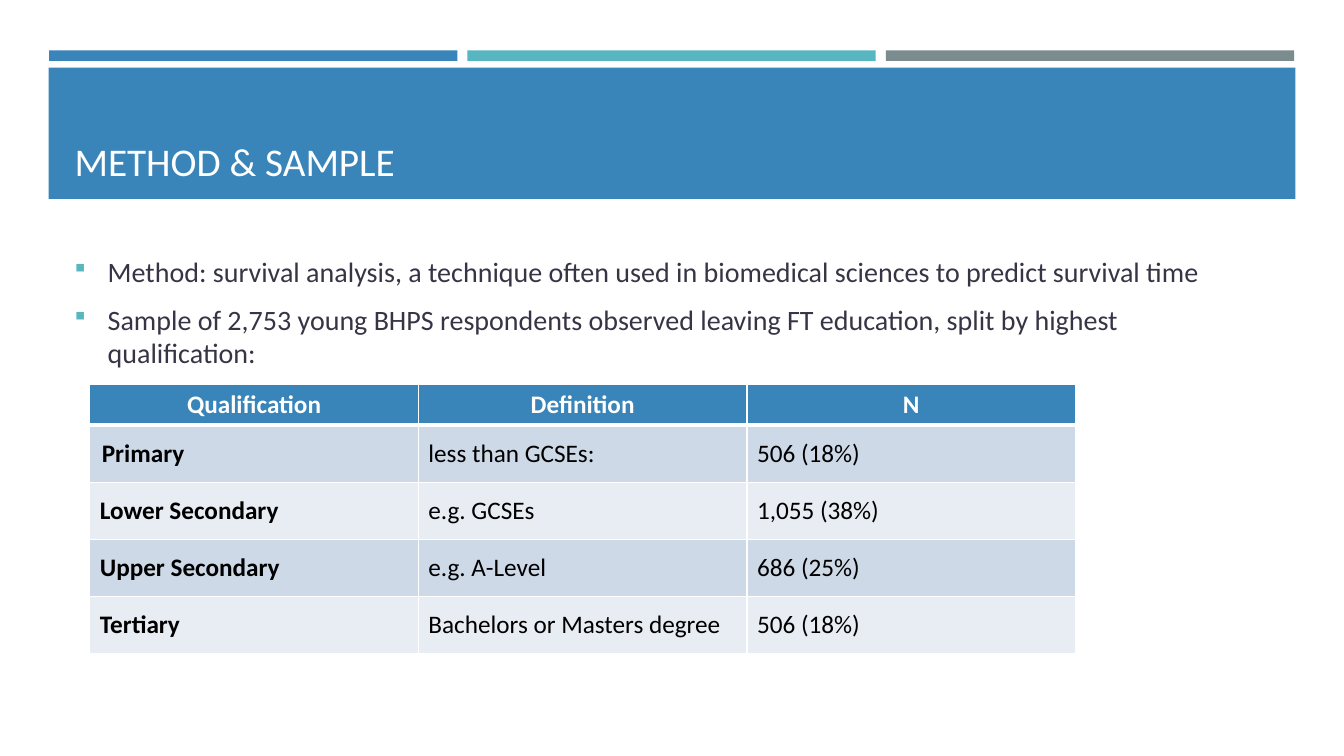
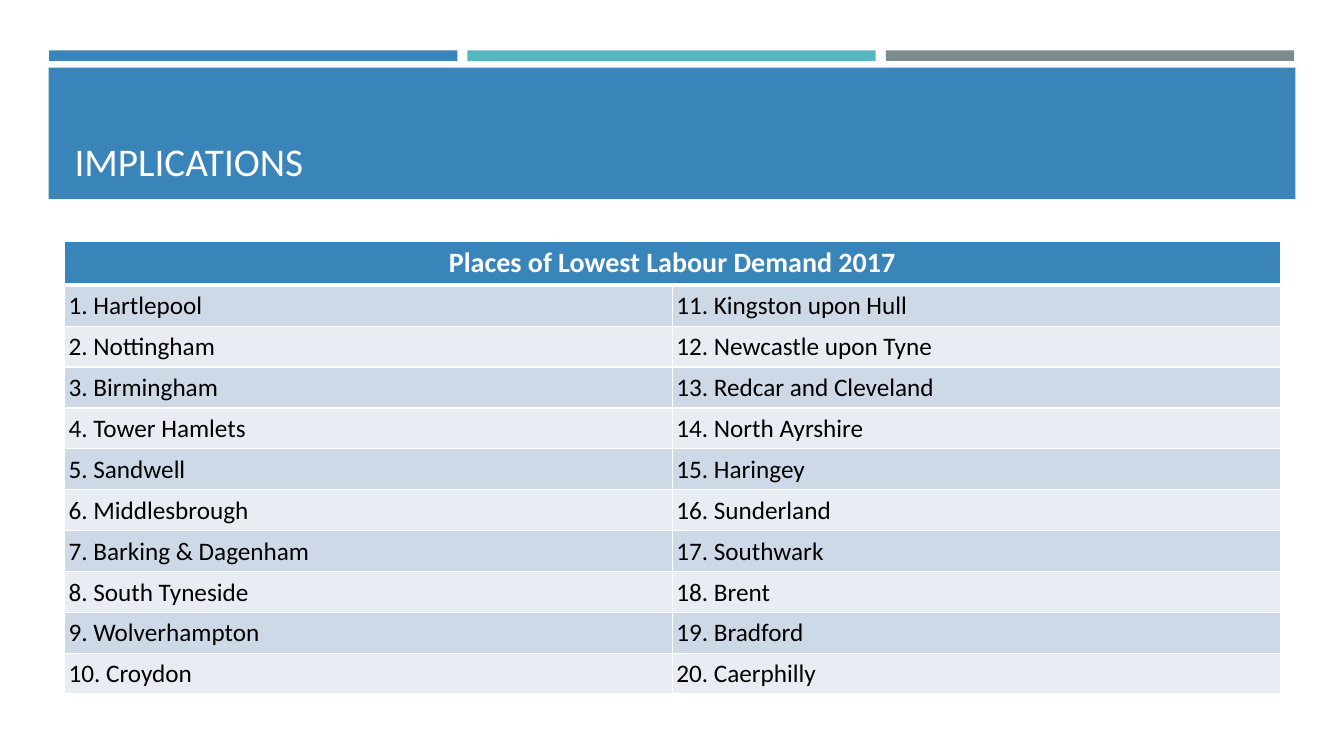
from lxml import etree
from pptx import Presentation
from pptx import util as u
from pptx.dml.color import RGBColor
from pptx.enum import shapes, text
from pptx.oxml.ns import qn

BLUE, TEAL, GREY = "3985BA", "58B6C0", "7A8C8E"
WHITE, BLACK, INK = "FFFFFF", "000000", "373545"
STRIPES = ["CED9E7", "E8EDF3"]
CONTENT_LEFT, CONTENT_WIDTH = 4.8, 90.45


def colour(value):
    return RGBColor.from_string(value)


class Deck:
    font = "Calibri"

    def __init__(self):
        self.presentation = Presentation()
        self.presentation.slide_width = u.Inches(13.33)
        self.presentation.slide_height = u.Inches(7.5)
        self.slide = None

    def across(self, percent):
        return round(self.presentation.slide_width * percent / 100)

    def down(self, percent):
        return round(self.presentation.slide_height * percent / 100)

    def box(self, left, top, width, height):
        return self.across(left), self.down(top), self.across(width), self.down(height)

    def style(self, paragraph, size, value, bold=False, align=text.PP_ALIGN.LEFT):
        paragraph.alignment = align
        for run in paragraph.runs:
            run.font.name = self.font
            run.font.size = u.Pt(size)
            run.font.bold = bold
            run.font.color.rgb = colour(value)

    def add_slide(self, heading):
        layout = self.presentation.slide_layouts.get_by_name("Title Only")
        self.slide = self.presentation.slides.add_slide(layout)
        for column, fill in enumerate([BLUE, TEAL, GREY]):
            self.band(3.65 + column * 31.13, 6.65, 30.38, 1.4, fill)
        self.band(3.62, 8.95, 92.77, 17.37, BLUE)
        self.title(heading)

    def band(self, left, top, width, height, fill):
        shape = self.slide.shapes.add_shape(
            shapes.MSO_SHAPE.RECTANGLE, *self.box(left, top, width, height))
        shape.shadow.inherit = False
        shape.fill.solid()
        shape.fill.fore_color.rgb = colour(fill)
        shape.line.fill.background()
        self.slide.shapes.title.element.addprevious(shape.element)

    def title(self, heading):
        title = self.slide.shapes.title
        title.left, title.top, title.width, title.height = self.box(
            CONTENT_LEFT, 10.27, CONTENT_WIDTH, 14.8)
        frame = title.text_frame
        frame.text = heading
        frame.auto_size = text.MSO_AUTO_SIZE.NONE
        frame.vertical_anchor = text.MSO_ANCHOR.BOTTOM
        self.style(frame.paragraphs[0], 28, WHITE)

    def bullets(self, lines, left, top, width, height):
        shape = self.slide.shapes.add_textbox(*self.box(left, top, width, height))
        frame = shape.text_frame
        frame.word_wrap = True
        frame.vertical_anchor = text.MSO_ANCHOR.MIDDLE
        frame.text = "\n".join(lines)
        for paragraph in frame.paragraphs:
            self.style(paragraph, 20, INK)
            paragraph.space_before = u.Pt(4)
            paragraph.space_after = u.Pt(6)
            self.bullet(paragraph)

    def bullet(self, paragraph):
        properties = paragraph._p.get_or_add_pPr()
        properties.set("marL", str(u.Inches(0.33)))
        properties.set("indent", str(-u.Inches(0.33)))
        marker = etree.SubElement(properties, qn("a:buClr"))
        etree.SubElement(marker, qn("a:srgbClr"), val=TEAL)
        etree.SubElement(properties, qn("a:buSzPct"), val="92000")
        etree.SubElement(properties, qn("a:buFont"), typeface="Wingdings")
        etree.SubElement(properties, qn("a:buChar"), char="§")

    def table(self, rows, left, top, width, height, header_height,
              header_size=18, bold_first=False, margins=(0.1, 0.05, 0.1, 0.05)):
        columns = len(rows[0])
        table = self.slide.shapes.add_table(
            len(rows), columns, *self.box(left, top, width, height)).table
        body_height = (height - header_height) / (len(rows) - 1)
        for index, values in enumerate(rows):
            header = index == 0
            table.rows[index].height = self.down(header_height if header else body_height)
            for column, value in enumerate(values):
                cell = table.cell(index, column)
                cell.text = value
                paragraph = cell.text_frame.paragraphs[0]
                if header:
                    self.style(paragraph, header_size, WHITE, True, text.PP_ALIGN.CENTER)
                else:
                    self.style(paragraph, 18, BLACK, bold_first and column == 0)
                    cell.vertical_anchor = text.MSO_ANCHOR.MIDDLE
                    (cell.margin_left, cell.margin_top, cell.margin_right,
                     cell.margin_bottom) = map(u.Inches, margins)
                cell.fill.solid()
                cell.fill.fore_color.rgb = colour(BLUE if header else STRIPES[(index - 1) % 2])
                self.borders(cell, top=3 if index == 1 else 1, bottom=3 if header else 1)
        return table

    def borders(self, cell, top, bottom):
        properties = cell._tc.get_or_add_tcPr()
        widths = {"a:lnL": 1, "a:lnR": 1, "a:lnT": top, "a:lnB": bottom}
        for position, (side, points) in enumerate(widths.items()):
            line = etree.Element(qn(side), w=str(u.Pt(points)))
            fill = etree.SubElement(line, qn("a:solidFill"))
            etree.SubElement(fill, qn("a:srgbClr"), val=WHITE)
            properties.insert(position, line)


def method_slide(deck):
    deck.add_slide("METHOD & SAMPLE")
    deck.bullets([
        "Method: survival analysis, a technique often used in biomedical sciences "
        "to predict survival time",
        "Sample of 2,753 young BHPS respondents observed leaving FT education, "
        "split by highest qualification:",
    ], CONTENT_LEFT, 31.73, CONTENT_WIDTH, 19.07)
    table = deck.table([
        ["Qualification", "Definition", "N"],
        ["Primary", "less than GCSEs:", "506 (18%)"],
        ["Lower Secondary", "e.g. GCSEs", "1,055 (38%)"],
        ["Upper Secondary", "e.g. A-Level", "686 (25%)"],
        ["Tertiary", "Bachelors or Masters degree", "506 (18%)"],
    ], 6.68, 50.85, 73.35, 35.6, header_height=5.4, bold_first=True)
    table.cell(1, 0).margin_left = u.Inches(0.12)


def implications_slide(deck):
    deck.add_slide("IMPLICATIONS")
    places = [
        "Hartlepool", "Nottingham", "Birmingham", "Tower Hamlets", "Sandwell",
        "Middlesbrough", "Barking & Dagenham", "South Tyneside", "Wolverhampton", "Croydon",
        "Kingston upon Hull", "Newcastle upon Tyne", "Redcar and Cleveland",
        "North Ayrshire", "Haringey", "Sunderland", "Southwark", "Brent", "Bradford",
        "Caerphilly",
    ]
    ranked = [f"{rank}. {place}" for rank, place in enumerate(places, 1)]
    half = len(ranked) // 2
    rows = [["Places of Lowest Labour Demand 2017", ""], *zip(ranked[:half], ranked[half:])]
    table = deck.table(rows, CONTENT_LEFT, 31.87, CONTENT_WIDTH, 59.87, header_height=5.8,
                       header_size=20, margins=(0.04, 0.01, 0.04, 0))
    heading = table.cell(0, 0)
    heading.merge(table.cell(0, 1))
    heading.margin_left = heading.margin_right = u.Inches(0.25)


def main():
    deck = Deck()
    method_slide(deck)
    implications_slide(deck)
    deck.presentation.save("out.pptx")


if __name__ == "__main__":
    main()
